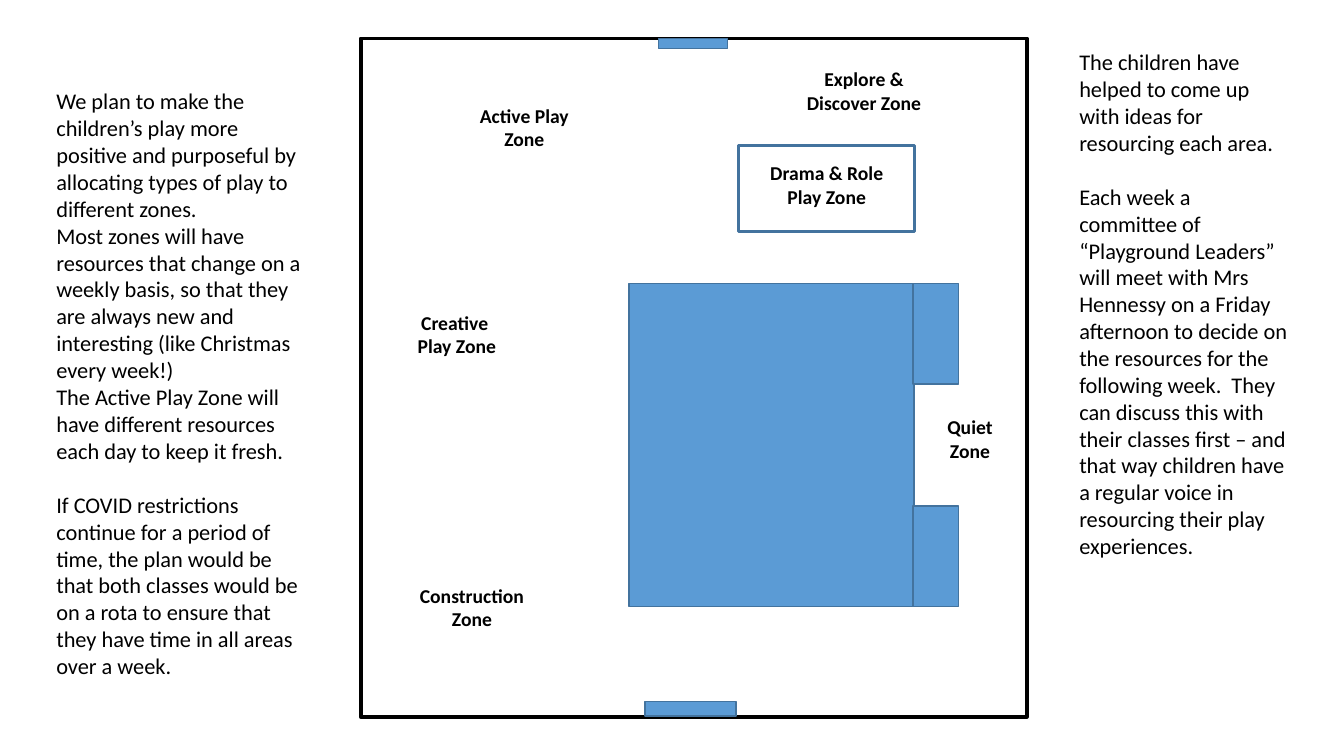
import pptx
import pptx.util
import pptx.dml.color
import pptx.enum.shapes
import pptx.enum.text

Cm, Pt = pptx.util.Cm, pptx.util.Pt

COLORS = {"black": "000000", "blue": "5B9BD5", "edge": "43739E"}
FONT = "Calibri"

BUILDING = (15.85, 7.14, 7.19, 8.15)
WING_LEFT, WING_WIDTH, WING_HEIGHT = 23.01, 1.14, 2.54
WING_TOPS = [BUILDING[1] + BUILDING[3] - WING_HEIGHT, BUILDING[1]]

PLAYGROUND = (9.09, 0.97, 16.79, 17.09)
GATES = [(16.59, 0.97, 1.75, 0.25), (16.26, 17.68, 2.29, 0.36)]
DRAMA_AREA = (18.62, 3.66, 4.42, 2.18)

LABEL_SIZE = (3.63, 1.45)
ZONES = [
    ((19.02, 3.94), ["Drama & Role Play Zone"]),
    ((11.4, 2.49), ["Active Play Zone"]),
    ((19.96, 1.57), ["Explore & Discover Zone"]),
    ((22.63, 10.34), ["Quiet", "Zone"]),
    ((9.7, 7.7), ["Creative ", "Play Zone"]),
    ((10.08, 14.58), ["Construction Zone"]),
]

NOTE_GAP = 19.5
NOTES = [
    ((1.17, 2.08, 6.86, 15.29), [
        "We plan to make the children’s play more positive and purposeful by allocating types of play to different zones.",
        "Most zones will have resources that change on a weekly basis, so that they are always new and interesting (like Christmas every week!)",
        "The Active Play Zone will have different resources each day to keep it fresh.",
        "If COVID restrictions continue for a period of time, the plan would be that both classes would be on a rota to ensure that they have time in all areas over a week.",
    ]),
    ((26.95, 1.09, 5.87, 13.26), [
        "The children have helped to come up with ideas for resourcing each area.",
        "Each week a committee of “Playground Leaders” will meet with Mrs Hennessy on a Friday afternoon to decide on the resources for the following week.  They can discuss this with their classes first – and that way children have a regular voice in resourcing their play experiences.",
    ]),
]


def rgb(name):
    return pptx.dml.color.RGBColor.from_string(COLORS[name])


def add_box(s, box, line, width, fill=None):
    sp = s.shapes.add_shape(pptx.enum.shapes.MSO_SHAPE.RECTANGLE, *map(Cm, box))
    sp.shadow.inherit = False
    if fill:
        sp.fill.solid()
        sp.fill.fore_color.rgb = rgb(fill)
    else:
        sp.fill.background()
    sp.line.color.rgb = rgb(line)
    sp.line.width = Pt(width)


def add_text(s, box, lines, size, bold=False, align=pptx.enum.text.PP_ALIGN.LEFT):
    tf = s.shapes.add_textbox(*map(Cm, box)).text_frame
    tf.word_wrap = True
    tf.auto_size = pptx.enum.text.MSO_AUTO_SIZE.SHAPE_TO_FIT_TEXT
    tf.text = "\n".join(lines)
    for p in tf.paragraphs:
        p.alignment = align
        for r in p.runs:
            r.font.name = FONT
            r.font.size = Pt(size)
            r.font.bold = bold
            r.font.color.rgb = rgb("black")
    return tf


def main():
    prs = pptx.Presentation()
    prs.slide_width, prs.slide_height = Cm(33.87), Cm(19.05)
    s = prs.slides.add_slide(prs.slide_layouts[6])

    add_box(s, PLAYGROUND, "black", 2.75)
    wings = [(WING_LEFT, top, WING_WIDTH, WING_HEIGHT) for top in WING_TOPS]
    for box in [*GATES, BUILDING, *wings]:
        add_box(s, box, "edge", 1, "blue")
    add_box(s, DRAMA_AREA, "edge", 2.25)

    for place, lines in ZONES:
        add_text(s, place + LABEL_SIZE, lines, 14, True, pptx.enum.text.PP_ALIGN.CENTER)
    for box, lines in NOTES:
        tf = add_text(s, box, lines, 16)
        tf.paragraphs[-1].space_before = Pt(NOTE_GAP)

    prs.save("out.pptx")


if __name__ == "__main__":
    main()
